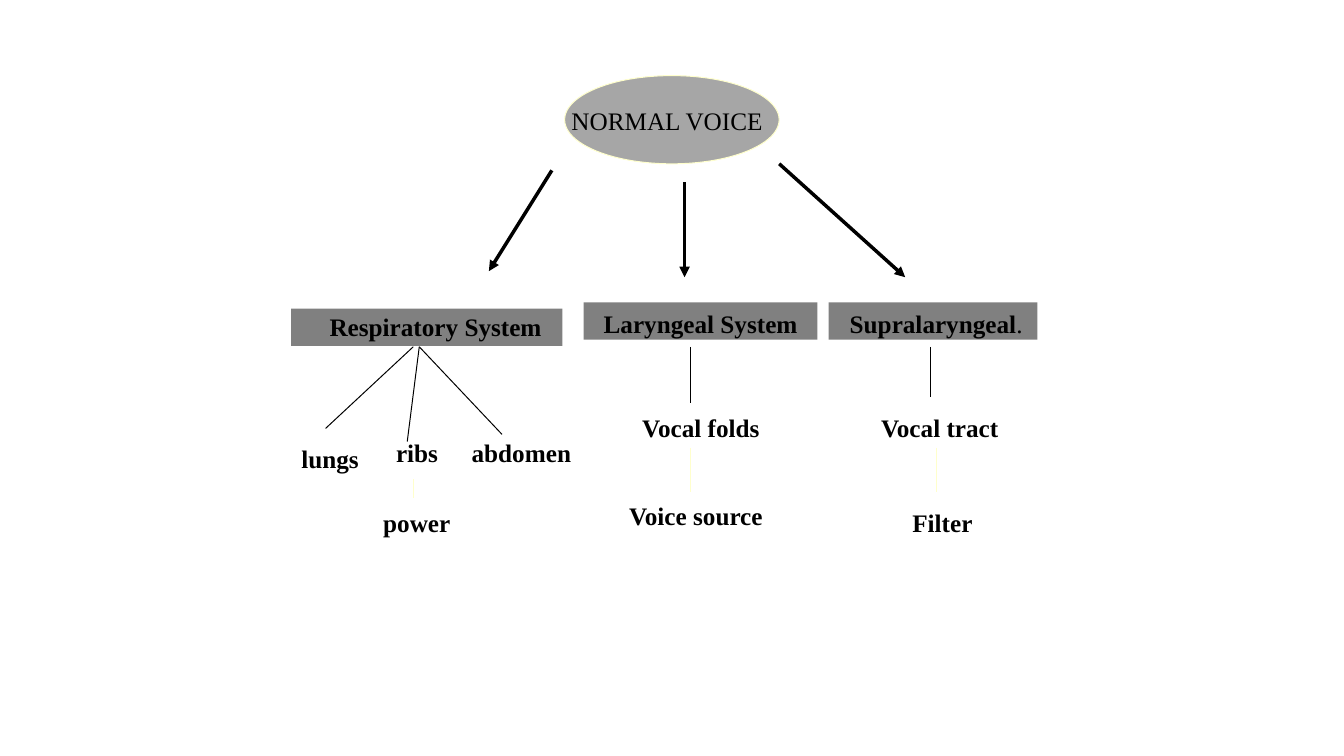
from dataclasses import dataclass

from lxml import etree
from pptx import Presentation
from pptx import util as u
from pptx.dml.color import RGBColor
from pptx.enum import shapes, text
from pptx.oxml import ns

COLORS = {"ink": "000000", "oval": "A6A6A6", "bar": "808080", "pale": "FFFFCC"}
FONT = "Times New Roman"


@dataclass
class Bar:
    """A grey heading bar with its text insets."""
    words: str
    x: float
    y: float
    w: float
    left: float
    top: float


@dataclass
class Label:
    """A bold caption with its box position and width."""
    words: str
    x: float
    y: float
    w: float


@dataclass
class Line:
    """A straight line, with an arrowhead at its end if wanted."""
    x1: float
    y1: float
    x2: float
    y2: float
    color: str = "ink"
    width: float = 0.72
    arrow: bool = False


BAR_H, LABEL_H = 26.6, 22.3
BARS = [
    Bar("Respiratory System", 208, 220.5, 193.7, 27.4, 2.2),
    Bar("Laryngeal System", 416.8, 216, 167, 14.4, 4.5),
    Bar("Supralaryngeal", 592, 216, 149, 15, 4.5),
]
LABELS = [
    Label("lungs", 214.5, 316, 42.5),
    Label("ribs", 282.2, 311.8, 31.7),
    Label("abdomen", 336.2, 311.8, 72.7),
    Label("power", 273, 361.4, 49.7),
    Label("Vocal folds", 458, 293.8, 85.7),
    Label("Voice source", 448.6, 357, 97.2),
    Label("Vocal tract", 628.6, 293.8, 85.7),
    Label("Filter", 651, 361.4, 44.6),
]
LINES = [
    Line(394.2, 121.7, 349.2, 193.7, width=2.5, arrow=True),
    Line(489, 130.3, 489, 198, width=2.5, arrow=True),
    Line(556.6, 117, 646.6, 198, width=2.5, arrow=True),
    Line(295.2, 247.7, 232.6, 306),
    Line(299.5, 247.7, 290.9, 315.4),
    Line(299.5, 247.7, 358.6, 310.3),
    Line(493.2, 247.7, 493.2, 288),
    Line(664.6, 247.7, 664.6, 283.7),
    Line(295.2, 342, 295.2, 355.7, "pale"),
    Line(493.2, 319.7, 493.2, 351.4, "pale"),
    Line(668.9, 319.7, 668.9, 351.4, "pale"),
]


def rgb(name: str) -> RGBColor:
    """Return a named colour."""
    return RGBColor.from_string(COLORS[name])


def place(sp, x: float, y: float, w: float, h: float) -> None:
    """Move and size a shape in points."""
    sp.left, sp.top, sp.width, sp.height = map(u.Pt, (x, y, w, h))


def add_run(p, words: str, *, bold: bool = True) -> None:
    """Append a formatted run to a paragraph."""
    r = p.add_run()
    r.text = words
    r.font.name, r.font.size, r.font.bold = FONT, u.Pt(18), bold
    r.font.color.rgb = rgb("ink")


def write(sp, words: str, *, bold: bool = True, left: float = 0.7, top: float = 0.7,
          anchor=text.MSO_ANCHOR.TOP):
    """Set left-aligned text in a shape and return its paragraph."""
    tf = sp.text_frame
    tf.auto_size = text.MSO_AUTO_SIZE.NONE
    tf.word_wrap = False
    tf.vertical_anchor = anchor
    tf.margin_left, tf.margin_top = u.Pt(left), u.Pt(top)
    tf.margin_right = tf.margin_bottom = 0
    p = tf.paragraphs[0]
    p.alignment = text.PP_ALIGN.LEFT
    add_run(p, words, bold=bold)
    return p


def add_filled(s, kind, x: float, y: float, w: float, h: float, fill: str):
    """Add a flat filled shape without an outline."""
    sp = s.shapes.add_shape(kind, *map(u.Pt, (x, y, w, h)))
    sp.shadow.inherit = False
    sp.fill.solid()
    sp.fill.fore_color.rgb = rgb(fill)
    sp.line.fill.background()
    return sp


def add_line(s, line: Line) -> None:
    """Draw a line or an arrow."""
    ends = map(u.Pt, (line.x1, line.y1, line.x2, line.y2))
    sp = s.shapes.add_connector(shapes.MSO_CONNECTOR.STRAIGHT, *ends)
    sp.line.color.rgb = rgb(line.color)
    sp.line.width = u.Pt(line.width)
    if line.arrow:
        ln = sp.line.fill._xPr
        etree.SubElement(ln, ns.qn("a:tailEnd"), type="triangle")
    etree.SubElement(sp.element.spPr, ns.qn("a:effectLst"))


def main() -> None:
    """Build the slide and save it."""
    prs = Presentation()
    prs.slide_width, prs.slide_height = u.Pt(960), u.Pt(540)
    s = prs.slides.add_slide(prs.slide_layouts[5])

    oval = add_filled(s, shapes.MSO_SHAPE.OVAL, 403.3, 54, 153.2, 63, "oval")
    oval.line.color.rgb = rgb("pale")
    oval.line.width = u.Pt(0.72)

    title = s.shapes.title
    place(title, 407.5, 74.2, 145.4, LABEL_H)
    write(title, "NORMAL VOICE", bold=False, anchor=text.MSO_ANCHOR.BOTTOM)
    oval.element.addnext(title.element)

    for bar in BARS:
        sp = add_filled(s, shapes.MSO_SHAPE.RECTANGLE, bar.x, bar.y, bar.w, BAR_H, "bar")
        p = write(sp, bar.words, left=bar.left, top=bar.top)
    add_run(p, ".", bold=False)

    for line in LINES:
        add_line(s, line)

    for label in LABELS:
        sp = s.shapes.add_textbox(*map(u.Pt, (label.x, label.y, label.w, LABEL_H)))
        write(sp, label.words)

    prs.save("out.pptx")


if __name__ == "__main__":
    main()
